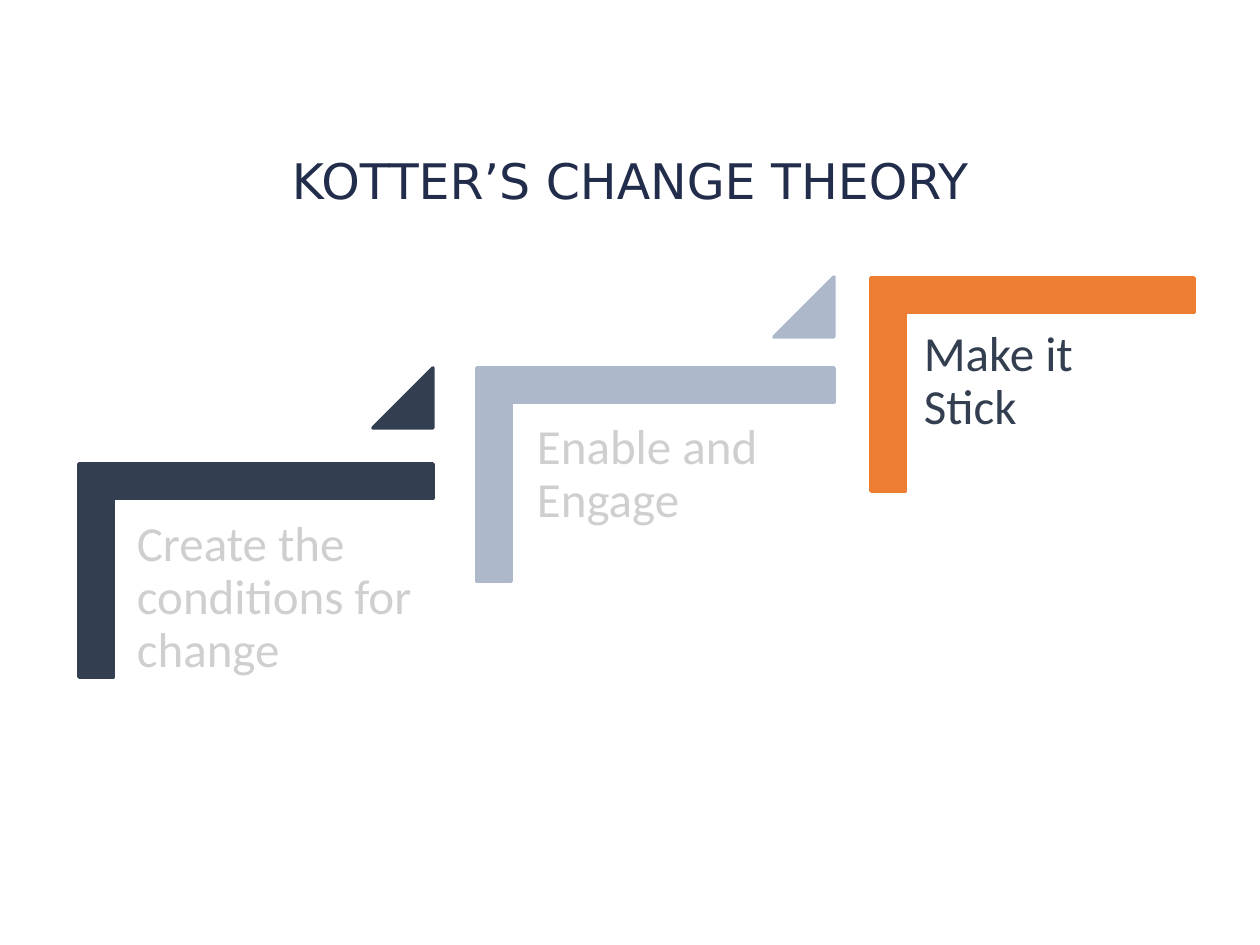
from pptx import Presentation, util as u
from pptx.dml.color import RGBColor
from pptx.enum import shapes, text

SCALE = 914400 / 126
NAVY, SLATE, MIST, ORANGE, GREY = "222C4B", "333F50", "ADB9CA", "ED7D31", "D0CECE"
STEP_HEIGHT, ARM, TRIANGLE, INSET = 213, 0.161, 60, 15

# wording, step box, text box offset and width, rise of the triangle, colours
STEPS = [
    ("Create the conditions for change", (79, 464, 354), (43, 40, 320), 96, SLATE, GREY),
    ("Enable and Engage", (477, 368, 357), (45, 39, 320), 91, MIST, GREY),
    ("Make it Stick", (871, 278, 323), (38, 36, 238), None, ORANGE, SLATE),
]


def px(length):
    return u.Emu(round(length * SCALE))


def colour(value):
    return RGBColor.from_string(value)


def set_font(para, name, ink):
    para.line_spacing = 0.9
    para.font.name = name
    para.font.size = u.Pt(28)
    para.font.bold = False
    para.font.color.rgb = colour(ink)


def add_shape(page, kind, left, top, width, height, fill, adjustments):
    shape = page.shapes.add_shape(kind, px(left), px(top), px(width), px(height))
    for index, value in enumerate(adjustments):
        shape.adjustments[index] = value
    shape.shadow.inherit = False
    shape.fill.solid()
    shape.fill.fore_color.rgb = colour(fill)
    shape.line.color.rgb = colour(fill)
    shape.line.width = u.Pt(2)
    return shape


def add_bracket(page, left, top, width, height, fill):
    """Place a corner shape turned a quarter so that it fills the given box."""
    shift = (width - height) / 2
    bracket = add_shape(page, shapes.MSO_SHAPE.CORNER, left + shift, top - shift,
                        height, width, fill, (ARM, ARM))
    bracket.rotation = 90


def add_label(page, left, top, width, wording, ink):
    box = page.shapes.add_textbox(px(left), px(top), px(width), px(280))
    frame = box.text_frame
    frame.word_wrap = True
    frame.margin_left = frame.margin_right = px(INSET)
    frame.margin_top = frame.margin_bottom = px(INSET)
    para = frame.paragraphs[0]
    para.text = wording
    set_font(para, "Calibri", ink)


def add_step(page, wording, box, label, rise, fill, ink):
    left, top, width = box
    label_left, label_top, label_width = label
    add_bracket(page, left, top, width, STEP_HEIGHT, fill)
    add_label(page, left + label_left, top + label_top, label_width, wording, ink)
    if rise is not None:
        add_shape(page, shapes.MSO_SHAPE.ISOSCELES_TRIANGLE, left + width - TRIANGLE,
                  top - rise, TRIANGLE, TRIANGLE, fill, (1,))


def set_title(page, left, top, width, height, wording):
    title = page.shapes.title
    title.left, title.top = px(left), px(top)
    title.width, title.height = px(width), px(height)
    frame = title.text_frame
    frame.auto_size = text.MSO_AUTO_SIZE.NONE
    frame.vertical_anchor = text.MSO_ANCHOR.MIDDLE
    para = frame.paragraphs[0]
    para.text = wording
    para.alignment = text.PP_ALIGN.CENTER
    set_font(para, "DejaVu Sans", NAVY)


def main():
    deck = Presentation()
    deck.slide_width, deck.slide_height = u.Inches(10), u.Inches(7.5)
    page = deck.slides.add_slide(deck.slide_layouts[5])
    set_title(page, 54, 155, 1152, 58, "KOTTER’S CHANGE THEORY")
    for step in STEPS:
        add_step(page, *step)
    deck.save("out.pptx")


if __name__ == "__main__":
    main()
